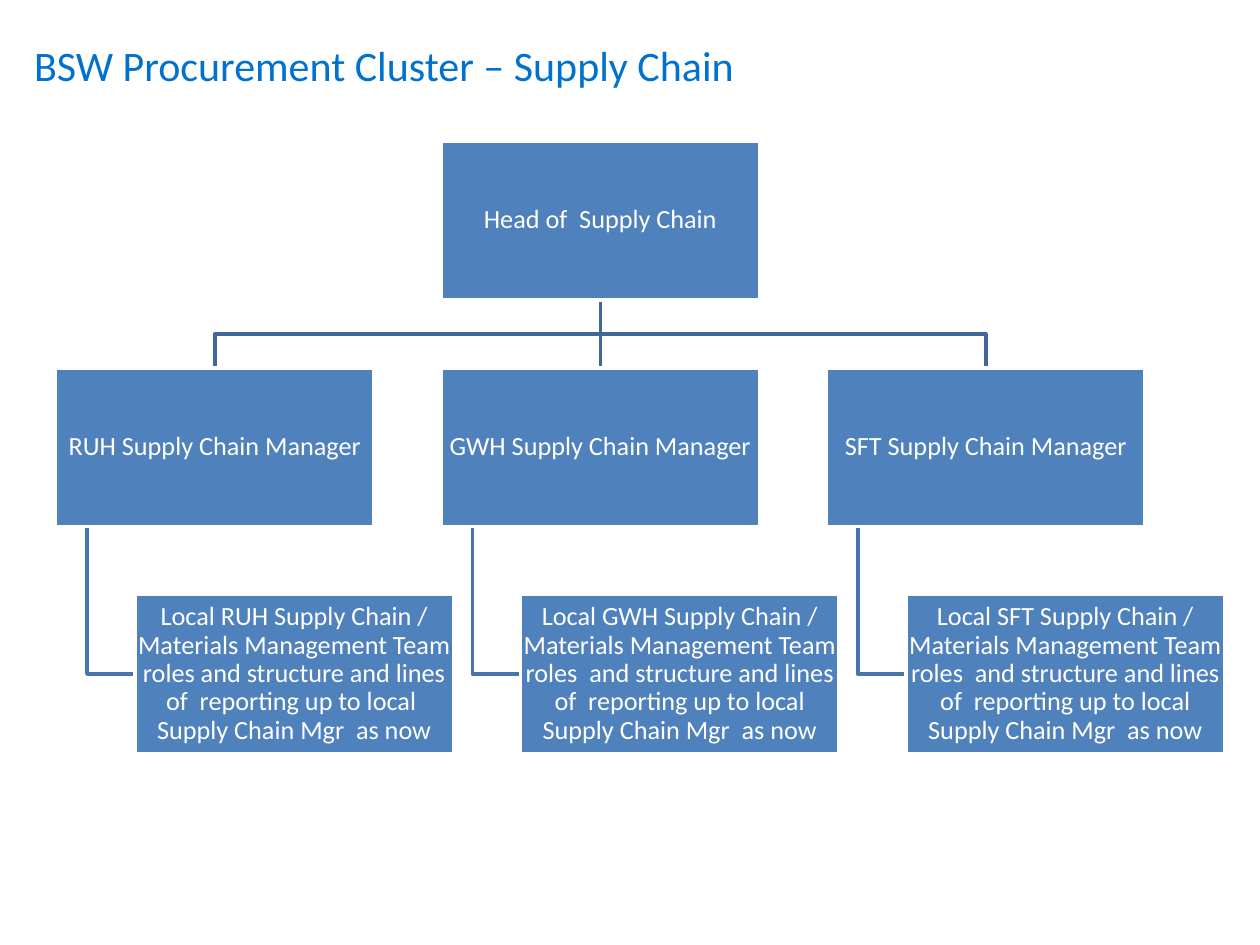
from lxml.etree import SubElement
from pptx import Presentation
from pptx.dml.color import RGBColor
from pptx.enum.shapes import MSO_CONNECTOR, MSO_SHAPE
from pptx.enum.text import MSO_ANCHOR, PP_ALIGN
from pptx.oxml.ns import qn
from pptx.util import Inches, Pt

COLORS = {
    "title": "0072CE",
    "box": "4F81BD",
    "white": "FFFFFF",
    "upper_line": "3F6797",
    "lower_line": "4875AC",
}
BOX_WIDTH, BOX_HEIGHT = 2.53, 1.26
FIRST_LEFT, COLUMN_STEP = 0.44, 3.06
HEAD_TOP, ROW_STEP = 1.12, 1.8
TEAM_INDENT, STEM_INDENT = 0.63, 0.25

manager_top = HEAD_TOP + ROW_STEP
team_top = manager_top + ROW_STEP
lefts = [FIRST_LEFT + column * COLUMN_STEP for column in range(3)]
centers = [left + BOX_WIDTH / 2 for left in lefts]
head_bottom = HEAD_TOP + BOX_HEIGHT
manager_bottom = manager_top + BOX_HEIGHT
branch_y = (head_bottom + manager_top) / 2
team_middle = team_top + BOX_HEIGHT / 2

presentation = Presentation()
presentation.slide_width = Inches(10)
presentation.slide_height = Inches(7.5)
slide = presentation.slides.add_slide(presentation.slide_layouts[5])


def add_bent_line(points, color):
    corners = [(Inches(x), Inches(y)) for x, y in points]
    builder = slide.shapes.build_freeform(*corners[0])
    builder.add_line_segments(corners[1:], close=False)
    shape = builder.convert_to_shape()
    shape.shadow.inherit = False
    shape.fill.background()
    shape.line.color.rgb = RGBColor.from_string(COLORS[color])
    shape.line.width = Pt(2)


def add_box(left, top, text):
    shape = slide.shapes.add_shape(
        MSO_SHAPE.RECTANGLE, Inches(left), Inches(top), Inches(BOX_WIDTH), Inches(BOX_HEIGHT)
    )
    shape.shadow.inherit = False
    shape.fill.solid()
    shape.fill.fore_color.rgb = RGBColor.from_string(COLORS["box"])
    shape.line.color.rgb = RGBColor.from_string(COLORS["white"])
    shape.line.width = Pt(2)
    frame = shape.text_frame
    frame_format = {"word_wrap": True, "vertical_anchor": MSO_ANCHOR.MIDDLE}
    for side in ("left", "top", "right", "bottom"):
        frame_format[f"margin_{side}"] = Inches(0.01)
    for name, value in frame_format.items():
        setattr(frame, name, value)
    paragraph = frame.paragraphs[0]
    paragraph.text = text
    paragraph.alignment = PP_ALIGN.CENTER
    paragraph.line_spacing = 0.9
    for name, value in {"name": "Calibri", "size": Pt(15)}.items():
        setattr(paragraph.font, name, value)
    paragraph.font.color.rgb = RGBColor.from_string(COLORS["white"])
    return shape


title = slide.shapes.title
title_place = {"left": 0.17, "top": -0.11, "width": 9, "height": 1.25}
for name, value in title_place.items():
    setattr(title, name, Inches(value))
title.text_frame.vertical_anchor = MSO_ANCHOR.MIDDLE
paragraph = title.text_frame.paragraphs[0]
paragraph.text = "BSW Procurement Cluster – Supply Chain"
paragraph.alignment = PP_ALIGN.LEFT
for name, value in {"name": "Calibri", "size": Pt(24)}.items():
    setattr(paragraph.font, name, value)
paragraph.font.color.rgb = RGBColor.from_string(COLORS["title"])

for left in lefts:
    stem_x = left + STEM_INDENT
    add_bent_line(
        [(stem_x, manager_bottom), (stem_x, team_middle), (left + TEAM_INDENT, team_middle)],
        "lower_line",
    )
for center in (centers[0], centers[2]):
    add_bent_line(
        [(centers[1], head_bottom), (centers[1], branch_y), (center, branch_y), (center, manager_top)],
        "upper_line",
    )

connector = slide.shapes.add_connector(
    MSO_CONNECTOR.STRAIGHT,
    Inches(centers[1]), Inches(head_bottom), Inches(centers[1]), Inches(manager_top),
)
connector.line.color.rgb = RGBColor.from_string(COLORS["upper_line"])
connector.line.width = Pt(2)
SubElement(connector._element.spPr, qn("a:effectLst"))

teams = {
    "RUH": "roles and structure and lines of  reporting up to local  Supply Chain Mgr  as now",
    "GWH": "roles  and structure and lines of  reporting up to local Supply Chain Mgr  as now",
    "SFT": "roles  and structure and lines of  reporting up to local Supply Chain Mgr  as now",
}
head = add_box(lefts[1], HEAD_TOP, "Head of  Supply Chain")
managers = []
for left, (site, duties) in zip(lefts, teams.items()):
    managers.append(add_box(left, manager_top, f"{site} Supply Chain Manager"))
    team_text = f"Local {site} Supply Chain / Materials Management Team {duties}"
    add_box(left + TEAM_INDENT, team_top, team_text)

connector.begin_connect(head, 2)
connector.end_connect(managers[1], 0)

presentation.save("out.pptx")
